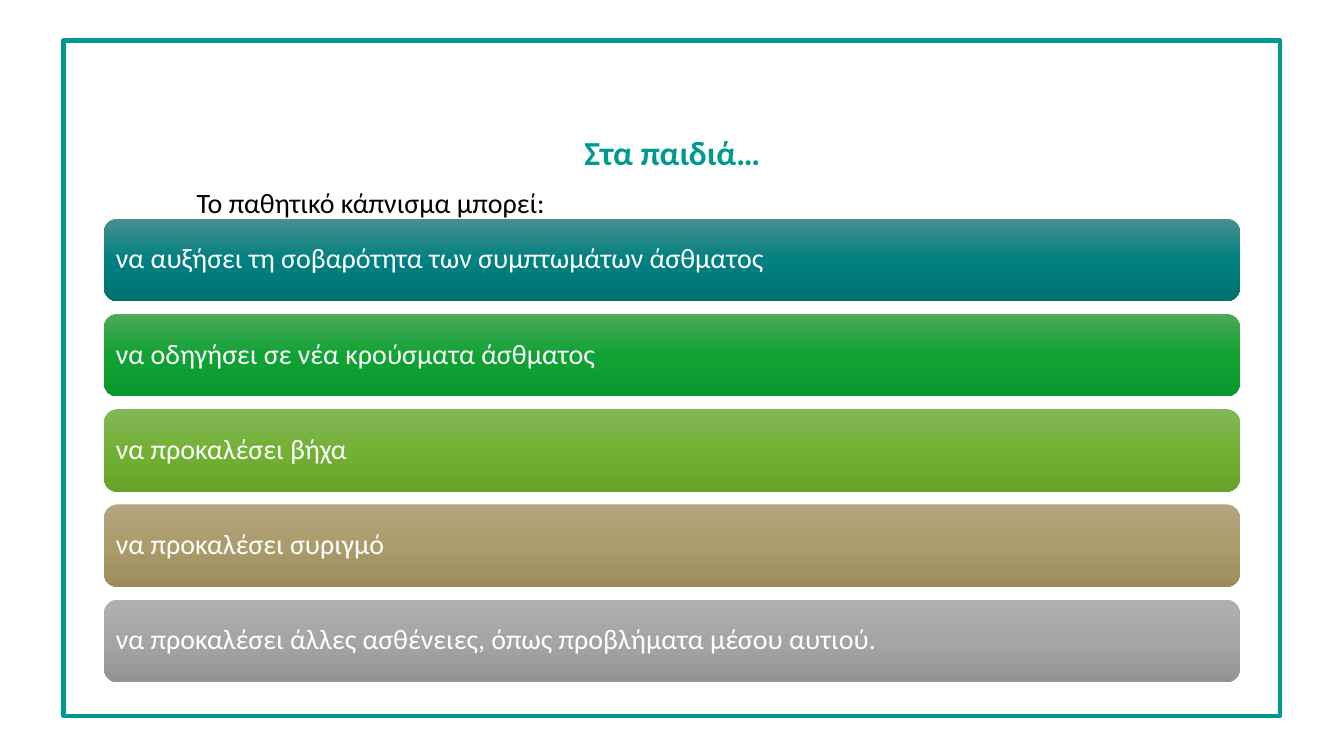
"""Build a slide on how passive smoking affects children."""
import copy
import dataclasses

import pptx
import pptx.dml.color
import pptx.enum.shapes
import pptx.enum.text
import pptx.presentation
import pptx.shapes.autoshape
import pptx.slide
import pptx.text.text
import pptx.util

Cm = pptx.util.Cm
Pt = pptx.util.Pt
Rgb = pptx.dml.color.RGBColor
Shape = pptx.enum.shapes.MSO_SHAPE
Align = pptx.enum.text.PP_ALIGN
Anchor = pptx.enum.text.MSO_ANCHOR


@dataclasses.dataclass(frozen=True)
class Theme:
    """Colours, font and type sizes of the slide."""

    font: str = "Calibri"
    accent: str = "009990"
    paper: str = "FFFFFF"
    ink: str = "000000"
    title_size: int = 24
    body_size: int = 20


@dataclasses.dataclass(frozen=True)
class Effect:
    """One effect of smoke and the top, middle and bottom colours of its bar."""

    text: str
    shades: tuple[str, str, str]


THEME = Theme()
EFFECTS = (
    Effect("να αυξήσει τη σοβαρότητα των συμπτωμάτων άσθματος", ("4B8E8E", "008080", "007272")),
    Effect("να οδηγήσει σε νέα κρούσματα άσθματος", ("4DA959", "10A334", "08972C")),
    Effect("να προκαλέσει βήχα", ("83B759", "73B134", "66A329")),
    Effect("να προκαλέσει συριγμό", ("B2A580", "AB9C6C", "9C8C5D")),
    Effect("να προκαλέσει άλλες ασθένειες, όπως προβλήματα μέσου αυτιού.", ("AFAFAF", "A5A5A5", "939393")),
)
BAR_TOP = 5.51
BAR_PITCH = 2.4


def write(frame: pptx.text.text.TextFrame, text: str, size: int, color: str,
          align: Align, spacing: float, bold: bool = False) -> None:
    """Fill a text frame with one formatted paragraph."""
    frame.text = text
    para = frame.paragraphs[0]
    para.alignment = align
    para.line_spacing = spacing
    para.space_before = Pt(0)
    for span in para.runs:
        span.font.name = THEME.font
        span.font.size = Pt(size)
        span.font.bold = bold
        span.font.color.rgb = Rgb.from_string(color)


def shade(bar: pptx.shapes.autoshape.Shape, shades: tuple[str, str, str]) -> None:
    """Give a bar a three-stop gradient from top to bottom."""
    bar.fill.gradient()
    bar.fill.gradient_angle = 270
    first = bar.fill._fill._gradFill.gsLst[0]
    first.addnext(copy.deepcopy(first))
    for stop, position, color in zip(bar.fill.gradient_stops, (0, 0.5, 1), shades):
        stop.position = position
        stop.color.rgb = Rgb.from_string(color)


def add_frame(page: pptx.slide.Slide) -> None:
    """Draw the border behind everything else."""
    border = page.shapes.add_shape(Shape.RECTANGLE, Cm(1.6), Cm(1.02), Cm(30.66), Cm(17.02))
    border.shadow.inherit = False
    border.fill.solid()
    border.fill.fore_color.rgb = Rgb.from_string(THEME.paper)
    border.line.color.rgb = Rgb.from_string(THEME.accent)
    border.line.width = Pt(3)
    page.shapes._spTree.insert(2, border._element)


def add_title(page: pptx.slide.Slide) -> None:
    """Place and format the title."""
    title = page.shapes.title
    title.left, title.top, title.width, title.height = Cm(2.34), Cm(3.28), Cm(29.21), Cm(1.22)
    title.text_frame.vertical_anchor = Anchor.MIDDLE
    write(title.text_frame, "Στα παιδιά…", THEME.title_size, THEME.accent, Align.CENTER, 0.9, bold=True)


def add_effect(page: pptx.slide.Slide, effect: Effect, top: float) -> None:
    """Draw one effect as a rounded bar with its text."""
    bar = page.shapes.add_shape(Shape.ROUNDED_RECTANGLE, Cm(2.62), Cm(top), Cm(28.63), Cm(2.08))
    bar.shadow.inherit = False
    bar.line.fill.background()
    shade(bar, effect.shades)
    frame = bar.text_frame
    frame.word_wrap = True
    frame.vertical_anchor = Anchor.MIDDLE
    frame.margin_left = frame.margin_right = frame.margin_top = frame.margin_bottom = Cm(0.2)
    write(frame, effect.text, THEME.body_size, THEME.paper, Align.LEFT, 0.9)


def add_intro(page: pptx.slide.Slide) -> None:
    """Add the line that leads into the bars."""
    box = page.shapes.add_textbox(Cm(4.67), Cm(4.5), Cm(9.35), Cm(1.14))
    box.text_frame.word_wrap = False
    box.text_frame.auto_size = pptx.enum.text.MSO_AUTO_SIZE.SHAPE_TO_FIT_TEXT
    write(box.text_frame, "Το παθητικό κάπνισμα μπορεί:", THEME.body_size, THEME.ink, Align.CENTER, 1.07)
    box.text_frame.paragraphs[0].space_after = Pt(8)


def main() -> None:
    """Build and save the deck."""
    deck: pptx.presentation.Presentation = pptx.Presentation()
    deck.slide_width, deck.slide_height = Cm(33.87), Cm(19.05)
    page = deck.slides.add_slide(deck.slide_layouts.get_by_name("Title Only"))
    add_frame(page)
    add_title(page)
    for index, effect in enumerate(EFFECTS):
        add_effect(page, effect, BAR_TOP + index * BAR_PITCH)
    add_intro(page)
    deck.save("out.pptx")


if __name__ == "__main__":
    main()
